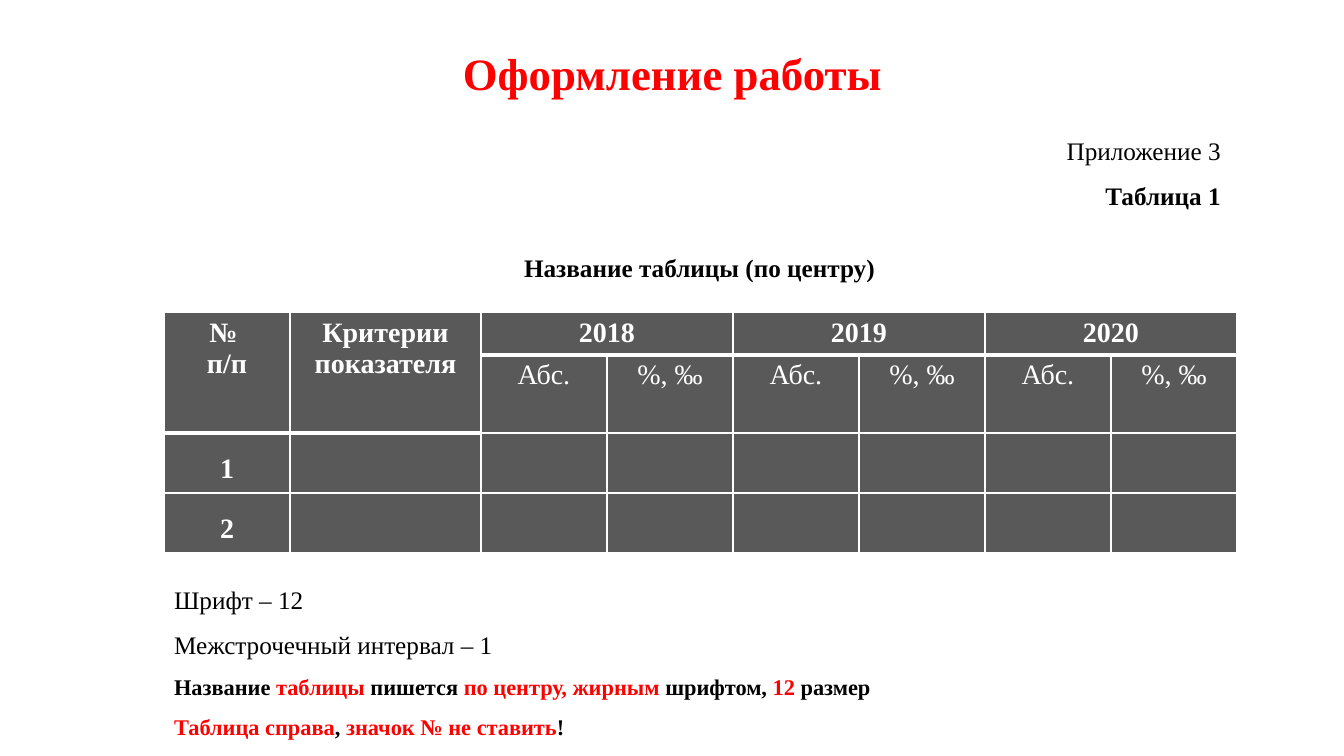
import pptx
import pptx.util
import pptx.dml.color
import pptx.enum.text
import pptx.oxml
import pptx.oxml.ns

PX = 12192000 / 1344
FONT = "Times New Roman"
RED = pptx.dml.color.RGBColor(0xFF, 0x00, 0x00)
BLACK = pptx.dml.color.RGBColor(0x00, 0x00, 0x00)
WHITE = pptx.dml.color.RGBColor(0xFF, 0xFF, 0xFF)
GREY = pptx.dml.color.RGBColor(0x59, 0x59, 0x59)
ALIGN = pptx.enum.text.PP_ALIGN
ANCHOR = pptx.enum.text.MSO_ANCHOR
THIN, THICK = 0.96, 3

COLUMNS = [126, 191] + [126] * 6
ROWS = [43, 78, 60, 60]
YEARS = ["2018", "2019", "2020"]
MEASURES = ["Абс.", "%, ‰"]
NOTES = [
    (18, False, [("Шрифт – 12", BLACK)]),
    (18, False, [("Межстрочечный интервал – 1", BLACK)]),
    (16, True, [("Название ", BLACK), ("таблицы", RED), (" пишется ", BLACK),
                ("по центру, жирным ", RED), ("шрифтом, ", BLACK),
                ("12 ", RED), ("размер", BLACK)]),
    (16, True, [("Таблица справа", RED), (", ", BLACK),
                ("значок № не ставить", RED), ("!", BLACK)]),
]


def px(length):
    return pptx.util.Emu(round(length * PX))


def place(shape, left, top, width, height):
    shape.left, shape.top = px(left), px(top)
    shape.width, shape.height = px(width), px(height)


def write_para(para, spans, size, bold, align, spacing):
    para.alignment = align
    para.line_spacing = spacing
    para.space_before = pptx.util.Pt(0)
    for text, color in spans:
        span = para.add_run()
        span.text = text
        span.font.name = FONT
        span.font.size = pptx.util.Pt(size)
        span.font.bold = bold
        span.font.color.rgb = color


def write_lines(frame, lines, align, spacing):
    frame.word_wrap = True
    frame.auto_size = pptx.enum.text.MSO_AUTO_SIZE.NONE
    for index, (size, bold, spans) in enumerate(lines):
        para = frame.add_paragraph() if index else frame.paragraphs[0]
        write_para(para, spans, size, bold, align, spacing)


def remove_bullets(frame):
    for para in frame.paragraphs:
        properties = para._p.get_or_add_pPr()
        properties.set("marL", "0")
        properties.set("indent", "0")
        properties.append(pptx.oxml.parse_xml(
            f'<a:buNone {pptx.oxml.ns.nsdecls("a")}/>'))


def add_label(page, bounds, lines, align):
    box = page.shapes.add_textbox(*map(px, bounds))
    write_lines(box.text_frame, lines, align, 1.5)


def add_border(cell, side, points):
    width = pptx.util.Pt(points)
    cell._tc.get_or_add_tcPr().append(pptx.oxml.parse_xml(
        f'<a:ln{side} {pptx.oxml.ns.nsdecls("a")} w="{width}">'
        f'<a:solidFill><a:srgbClr val="{WHITE}"/></a:solidFill>'
        f'</a:ln{side}>'))


def style_cell(cell, row, column):
    header_rows = 2 if column < 2 else 1
    add_border(cell, "L", THIN)
    add_border(cell, "R", THIN)
    add_border(cell, "T", THICK if row == header_rows else THIN)
    is_header_end = row == header_rows - 1 or (column < 2 and row == 0)
    add_border(cell, "B", THICK if is_header_end else THIN)
    cell.fill.solid()
    cell.fill.fore_color.rgb = GREY
    cell.margin_left = cell.margin_right = px(7)
    cell.margin_top = cell.margin_bottom = px(5)


def write_cell(cell, text, bold=True, spacing=1.0):
    lines = [(20, bold, [(line, WHITE)]) for line in text.split("\n")]
    for index, (size, weight, spans) in enumerate(lines):
        frame = cell.text_frame
        para = frame.add_paragraph() if index else frame.paragraphs[0]
        write_para(para, spans, size, weight, ALIGN.CENTER, spacing)


def add_indicator_table(page):
    frame = page.shapes.add_table(
        len(ROWS), len(COLUMNS), px(164), px(312), px(sum(COLUMNS)), px(sum(ROWS)))
    table = frame.table
    for column, width in zip(table.columns, COLUMNS):
        column.width = px(width)
    for row, height in zip(table.rows, ROWS):
        row.height = px(height)
    for row in range(len(ROWS)):
        for column in range(len(COLUMNS)):
            style_cell(table.cell(row, column), row, column)

    for column, heading in enumerate(["№ \nп/п", "Критерии показателя"]):
        table.cell(0, column).merge(table.cell(1, column))
        write_cell(table.cell(0, column), heading)
    for index, year in enumerate(YEARS):
        first = 2 + 2 * index
        table.cell(0, first).merge(table.cell(0, first + 1))
        write_cell(table.cell(0, first), year)
        for offset, measure in enumerate(MEASURES):
            write_cell(table.cell(1, first + offset), measure, bold=False)
    for number in (1, 2):
        write_cell(table.cell(number + 1, 0), str(number), spacing=1.5)


def main():
    deck = pptx.Presentation()
    deck.slide_width, deck.slide_height = px(1344), px(756)
    page = deck.slides.add_slide(deck.slide_layouts[1])

    title = page.shapes.title
    place(title, 93, 40, 1159, 71)
    title.text_frame.vertical_anchor = ANCHOR.MIDDLE
    write_lines(title.text_frame, [(32, True, [("Оформление работы", RED)])],
                ALIGN.CENTER, 0.9)

    add_label(page, (164, 115, 1073, 101),
              [(18, False, [("Приложение 3 ", BLACK)]),
               (18, True, [("Таблица 1 ", BLACK)])], ALIGN.RIGHT)
    add_label(page, (492, 232, 415, 55),
              [(18, True, [("Название таблицы (по центру)", BLACK)])], ALIGN.CENTER)
    add_indicator_table(page)

    notes = page.placeholders[1]
    place(notes, 164, 564, 721, 181)
    write_lines(notes.text_frame, NOTES, ALIGN.JUSTIFY, 1.5)
    remove_bullets(notes.text_frame)

    deck.save("out.pptx")


if __name__ == "__main__":
    main()
